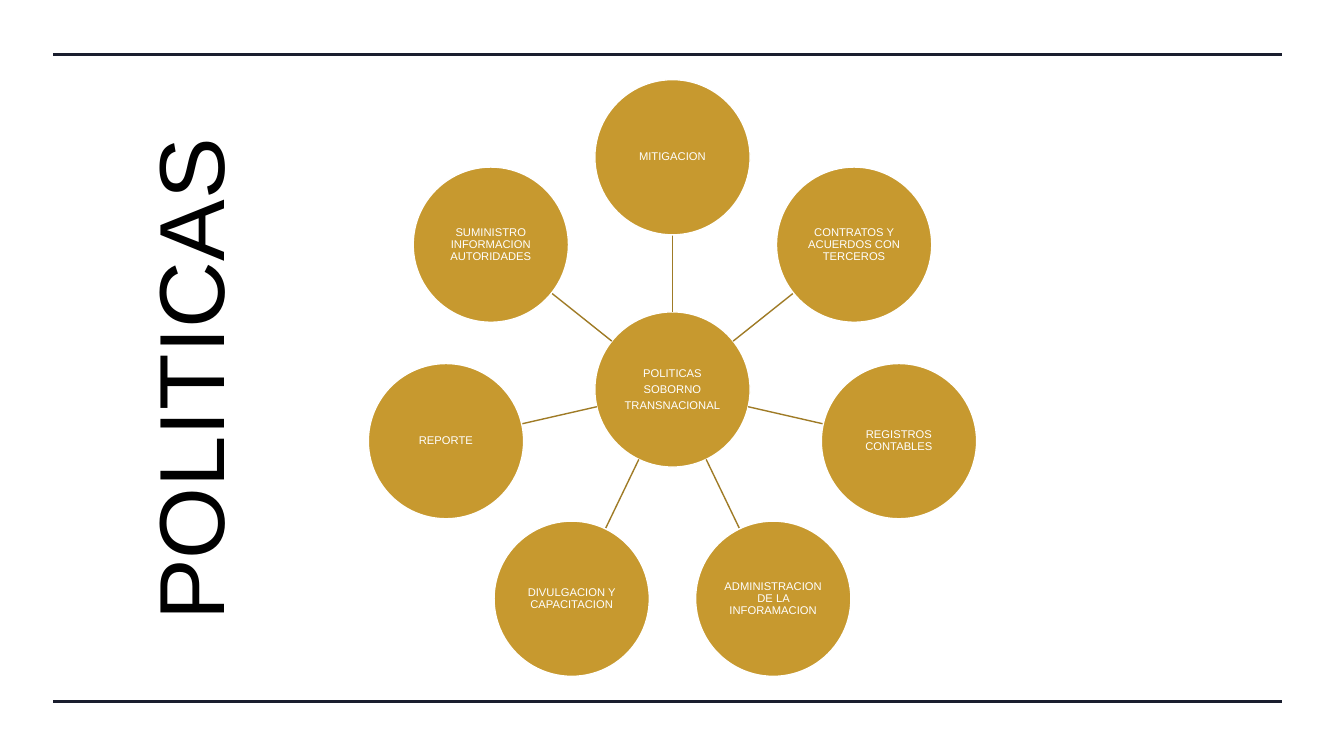
from dataclasses import dataclass
from math import cos, pi, sin

from lxml.etree import SubElement
from pptx import Presentation
from pptx.dml.color import RGBColor
from pptx.enum.shapes import MSO_CONNECTOR, MSO_SHAPE
from pptx.enum.text import MSO_ANCHOR, PP_ALIGN
from pptx.oxml.ns import qn
from pptx.util import Inches, Pt


@dataclass(frozen=True)
class Theme:
    font: str = "Arial"
    white: RGBColor = RGBColor(0xFF, 0xFF, 0xFF)
    black: RGBColor = RGBColor(0x00, 0x00, 0x00)
    navy: RGBColor = RGBColor(0x1A, 0x1E, 0x2E)
    gold: RGBColor = RGBColor(0xC7, 0x99, 0x2F)
    bronze: RGBColor = RGBColor(0x9F, 0x7B, 0x26)
    title_size: float = 66
    label_size: float = 8
    rule_width: float = 2.25
    thin_width: float = 1


THEME = Theme()
HUB_LINES = ["POLITICAS", "SOBORNO", "TRANSNACIONAL"]
# Clockwise from the top
POLICIES = [
    "MITIGACION",
    "CONTRATOS Y ACUERDOS CON TERCEROS",
    "REGISTROS CONTABLES",
    "ADMINISTRACION DE LA INFORAMACION",
    "DIVULGACION Y CAPACITACION",
    "REPORTE",
    "SUMINISTRO INFORMACION AUTORIDADES",
]


def write_text(text_frame, lines, *, size, color, anchor=MSO_ANCHOR.TOP,
               line_spacing=1.0, space_after=0):
    text_frame.word_wrap = True
    text_frame.vertical_anchor = anchor
    for index, line in enumerate(lines):
        paragraph = text_frame.paragraphs[0] if index == 0 else text_frame.add_paragraph()
        paragraph.alignment = PP_ALIGN.CENTER
        paragraph.line_spacing = line_spacing
        paragraph.space_after = Pt(space_after)
        run = paragraph.add_run()
        run.text = line
        run.font.name = THEME.font
        run.font.size = Pt(size)
        run.font.color.rgb = color


def add_line(slide, start, end, color, width):
    points = [Inches(value) for value in (*start, *end)]
    connector = slide.shapes.add_connector(MSO_CONNECTOR.STRAIGHT, *points)
    connector.line.color.rgb = color
    connector.line.width = Pt(width)
    SubElement(connector._element.spPr, qn("a:effectLst"))


def add_circle(slide, center_x, center_y, radius, lines):
    shape = slide.shapes.add_shape(
        MSO_SHAPE.OVAL, Inches(center_x - radius), Inches(center_y - radius),
        Inches(2 * radius), Inches(2 * radius))
    shape.shadow.inherit = False
    shape.fill.solid()
    shape.fill.fore_color.rgb = THEME.gold
    shape.line.color.rgb = THEME.white
    shape.line.width = Pt(THEME.thin_width)
    frame = shape.text_frame
    frame.margin_left = frame.margin_right = Inches(0.01)
    frame.margin_top = frame.margin_bottom = Inches(0.01)
    write_text(frame, lines, size=THEME.label_size, color=THEME.white,
               anchor=MSO_ANCHOR.MIDDLE, line_spacing=0.9, space_after=2.8)


def add_frame_rules(slide, left, top, width, height):
    for y in (top, top + height):
        add_line(slide, (left, y), (left + width, y), THEME.navy, THEME.rule_width)


def add_policy_wheel(slide, left, top, width, height, radius=0.77):
    center_x = left + width / 2
    orbit = height / (1 + cos(pi / len(POLICIES))) - 2 * radius / (1 + cos(pi / len(POLICIES)))
    center_y = top + radius + orbit

    def point_at(angle, distance):
        return center_x + distance * sin(angle), center_y - distance * cos(angle)

    # Hub
    add_circle(slide, center_x, center_y, radius, HUB_LINES)
    # Spokes and outer circles
    for index, policy in enumerate(POLICIES):
        angle = 2 * pi * index / len(POLICIES)
        add_line(slide, point_at(angle, radius), point_at(angle, orbit - radius),
                 THEME.bronze, THEME.thin_width)
        add_circle(slide, *point_at(angle, orbit), radius, [policy])


def add_vertical_title(slide, left, top, width, height, text):
    # The box is laid out flat, then turned about its centre
    center_x, center_y = left + width / 2, top + height / 2
    box = slide.shapes.add_textbox(
        Inches(center_x - height / 2), Inches(center_y - width / 2),
        Inches(height), Inches(width))
    box.rotation = 270
    box.text_frame.margin_right = Inches(0.6)
    write_text(box.text_frame, [text], size=THEME.title_size, color=THEME.black)


def main():
    presentation = Presentation()
    presentation.slide_width = Inches(13.33)
    presentation.slide_height = Inches(7.5)
    slide = presentation.slides.add_slide(presentation.slide_layouts[6])

    add_frame_rules(slide, 0.53, 0.54, 12.19, 6.42)
    add_policy_wheel(slide, 3.65, 0.79, 6.04, 5.92)
    add_vertical_title(slide, 1.26, -2.3, 2.36, 11.63, "POLITICAS")

    presentation.save("out.pptx")


if __name__ == "__main__":
    main()
